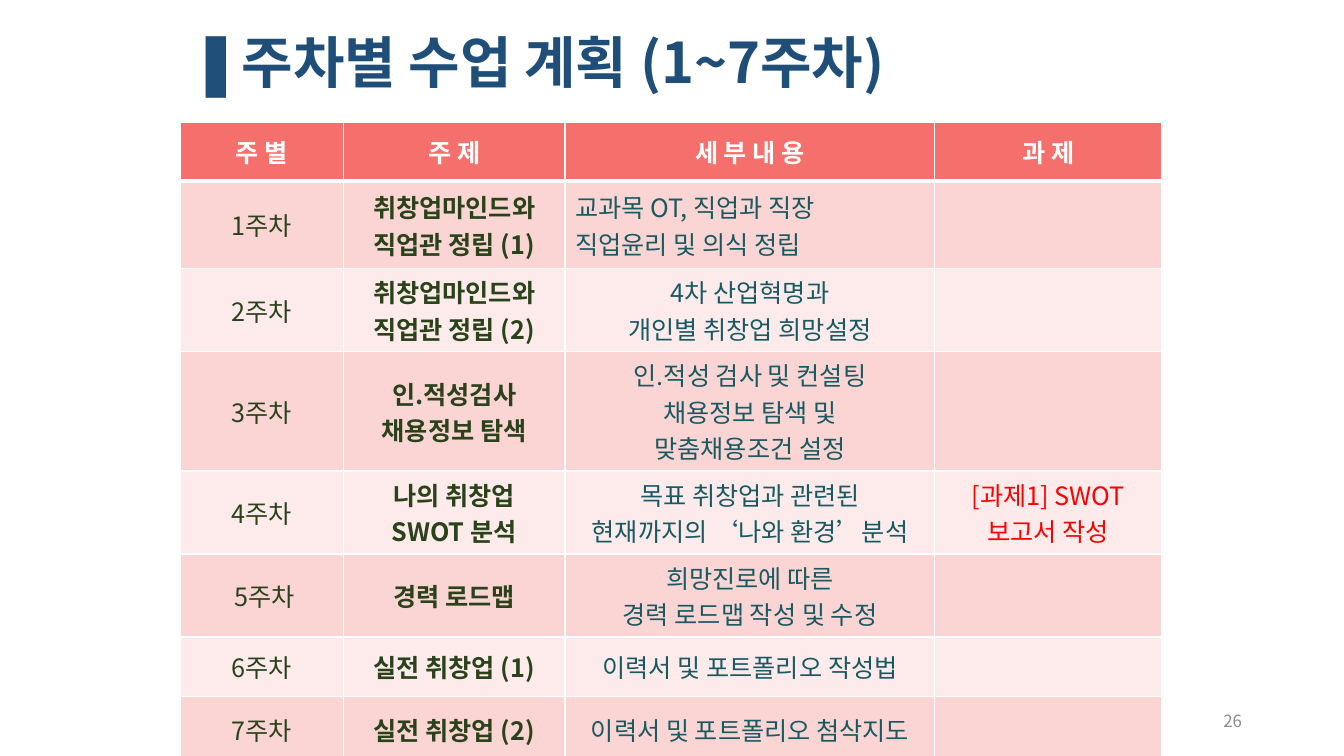
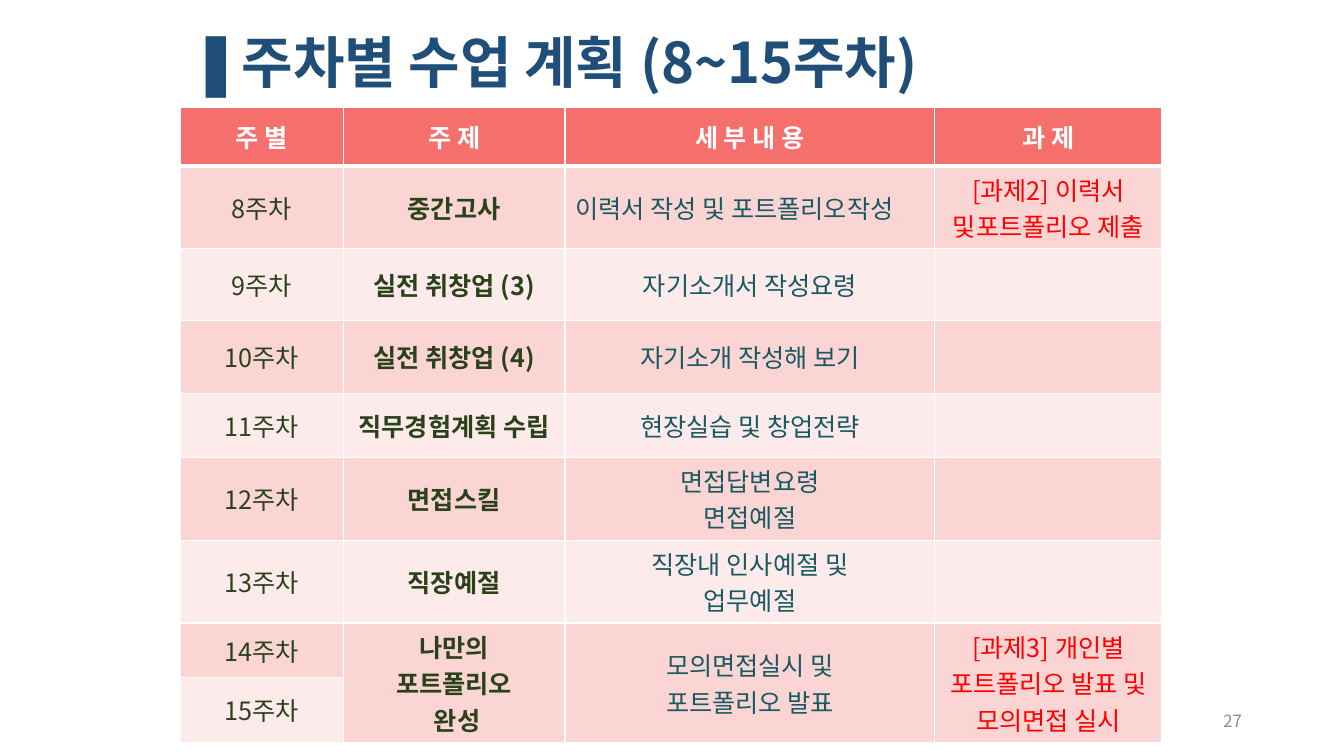
from lxml.etree import SubElement
from pptx import Presentation
from pptx.dml.color import RGBColor
from pptx.enum.text import MSO_ANCHOR, PP_ALIGN
from pptx.oxml.ns import qn
from pptx.util import Cm, Pt

NAVY = RGBColor(0x1F, 0x4E, 0x79)
GRAY = RGBColor(0x8C, 0x8C, 0x8C)
WHITE = RGBColor(0xFF, 0xFF, 0xFF)
CORAL = RGBColor(0xF5, 0x6F, 0x6C)
PINK = RGBColor(0xFB, 0xD5, 0xD4)
PALE = RGBColor(0xFD, 0xEB, 0xEB)
GREEN = RGBColor(0x2A, 0x42, 0x1A)
TEAL = RGBColor(0x19, 0x59, 0x62)
RED = RGBColor(0xFF, 0x00, 0x00)

FONT = "Noto Sans CJK KR"
LEFT = 4.54
WIDTHS = (4.11, 5.59, 9.32, 5.72)
INKS = (GREEN, GREEN, TEAL, RED)
TOPIC, DETAIL = 1, 2
HEAD = (1.47, "주 별", "주 제", "세 부 내 용", "과 제")

# Each row: height in cm, week, topic, detail, task
FIRST = (
    (2.21, "1주차", "취창업마인드와\n직업관 정립 (1)", "교과목 OT, 직업과 직장\n직업윤리 및 의식 정립", ""),
    (2.09, "2주차", "취창업마인드와\n직업관 정립 (2)", "4차 산업혁명과\n개인별 취창업 희망설정", ""),
    (3.01, "3주차", "인.적성검사\n채용정보 탐색", "인.적성 검사 및 컨설팅\n채용정보 탐색 및\n맞춤채용조건 설정", ""),
    (2.09, "4주차", "나의 취창업\nSWOT 분석", "목표 취창업과 관련된\n현재까지의 ‘나와 환경’분석",
     "[과제1] SWOT\n보고서 작성"),
    (2.09, " 5주차", "경력 로드맵", "희망진로에 따른\n경력 로드맵 작성 및 수정", ""),
    (1.5, "6주차", "실전 취창업 (1)", "이력서 및 포트폴리오 작성법", ""),
    (1.65, "7주차", "실전 취창업 (2)", "이력서 및 포트폴리오 첨삭지도", ""),
)
SECOND = (
    (2.09, "8주차", "중간고사", "이력서 작성 및 포트폴리오작성", "[과제2] 이력서 및포트폴리오 제출"),
    (1.8, "9주차", "실전 취창업 (3)", "자기소개서 작성요령", ""),
    (1.85, "10주차", "실전 취창업 (4)", "자기소개 작성해 보기", ""),
    (1.6, "11주차", "직무경험계획 수립", "현장실습 및 창업전략", ""),
    (2.09, "12주차", "면접스킬", "면접답변요령\n면접예절", ""),
    (2.09, "13주차", "직장예절", "직장내 인사예절 및\n업무예절", ""),
    (1.37, "14주차", "나만의\n포트폴리오\n 완성", "모의면접실시 및\n포트폴리오 발표",
     "[과제3] 개인별\n포트폴리오 발표 및 모의면접 실시"),
    (1.64, "15주차", "", "", ""),
)


def write(para, text, size=18, color=GREEN, bold=False, align=PP_ALIGN.CENTER):
    """Add one formatted run to a paragraph."""
    para.alignment = align
    run = para.add_run()
    run.text = text
    font = run.font
    font.name, font.size, font.bold = FONT, Pt(size), bold
    font.color.rgb = color


def add_box(slide, left, top, width, height):
    """Add a text box and return its first paragraph."""
    frame = slide.shapes.add_textbox(Cm(left), Cm(top), Cm(width), Cm(height)).text_frame
    frame.word_wrap = True
    frame.vertical_anchor = MSO_ANCHOR.MIDDLE
    return frame.paragraphs[0]


def add_title(slide, text):
    para = add_box(slide, LEFT, 0.51, 20.93, 2.18)
    para.line_spacing = 0.9
    for part, size, bold in (("❚", 44, False), (text, 40, True)):
        write(para, part, size=size, color=NAVY, bold=bold, align=PP_ALIGN.LEFT)


def add_edge(cell, side, width):
    line = SubElement(cell._tc.get_or_add_tcPr(), qn(f"a:ln{side}"), w=str(Pt(width)))
    fill = SubElement(line, qn("a:solidFill"))
    SubElement(fill, qn("a:srgbClr"), val=str(WHITE))


def fill_cell(cell, text, back, edges, **style):
    for side, width in edges.items():
        add_edge(cell, side, width)
    cell.fill.solid()
    cell.fill.fore_color.rgb = back
    cell.vertical_anchor = MSO_ANCHOR.MIDDLE
    frame = cell.text_frame
    for i, line in enumerate(text.split("\n") if text else ()):
        write(frame.add_paragraph() if i else frame.paragraphs[0], line, **style)


def add_plan(slide, top, weeks):
    """Add the table of weeks under a header row."""
    rows = (HEAD, *weeks)
    table = slide.shapes.add_table(
        len(rows), len(WIDTHS), Cm(LEFT), Cm(top),
        Cm(sum(WIDTHS)), Cm(sum(row[0] for row in rows))).table
    for col, width in zip(table.columns, WIDTHS):
        col.width = Cm(width)
    for r, (height, *texts) in enumerate(rows):
        table.rows[r].height = Cm(height)
        for c, text in enumerate(texts):
            cell = table.cell(r, c)
            if r == 0:
                fill_cell(cell, text, CORAL, dict(L=1, R=1, T=1, B=3), color=WHITE, bold=True)
                continue
            left = r == 1 and c == DETAIL
            fill_cell(cell, text, PINK if r % 2 else PALE, dict(L=1, R=1, B=1),
                      color=INKS[c], bold=c == TOPIC,
                      align=PP_ALIGN.LEFT if left else PP_ALIGN.CENTER)
    return table


def add_page(deck, number, title, top, weeks):
    slide = deck.slides.add_slide(deck.slide_layouts[6])
    add_title(slide, title)
    para = add_box(slide, 23.93, 17.65, 7.62, 1.02)
    write(para, str(number), size=12, color=GRAY, align=PP_ALIGN.RIGHT)
    return add_plan(slide, top, weeks)


def main():
    deck = Presentation()
    deck.slide_width, deck.slide_height = Cm(33.87), Cm(19.05)
    add_page(deck, 26, "주차별 수업 계획 (1~7주차)", 3.09, FIRST)
    table = add_page(deck, 27, "주차별 수업 계획 (8~15주차)", 2.71, SECOND)
    last = len(SECOND)
    for c in range(TOPIC, len(WIDTHS)):
        table.cell(last - 1, c).merge(table.cell(last, c))
    deck.save("out.pptx")


if __name__ == "__main__":
    main()
